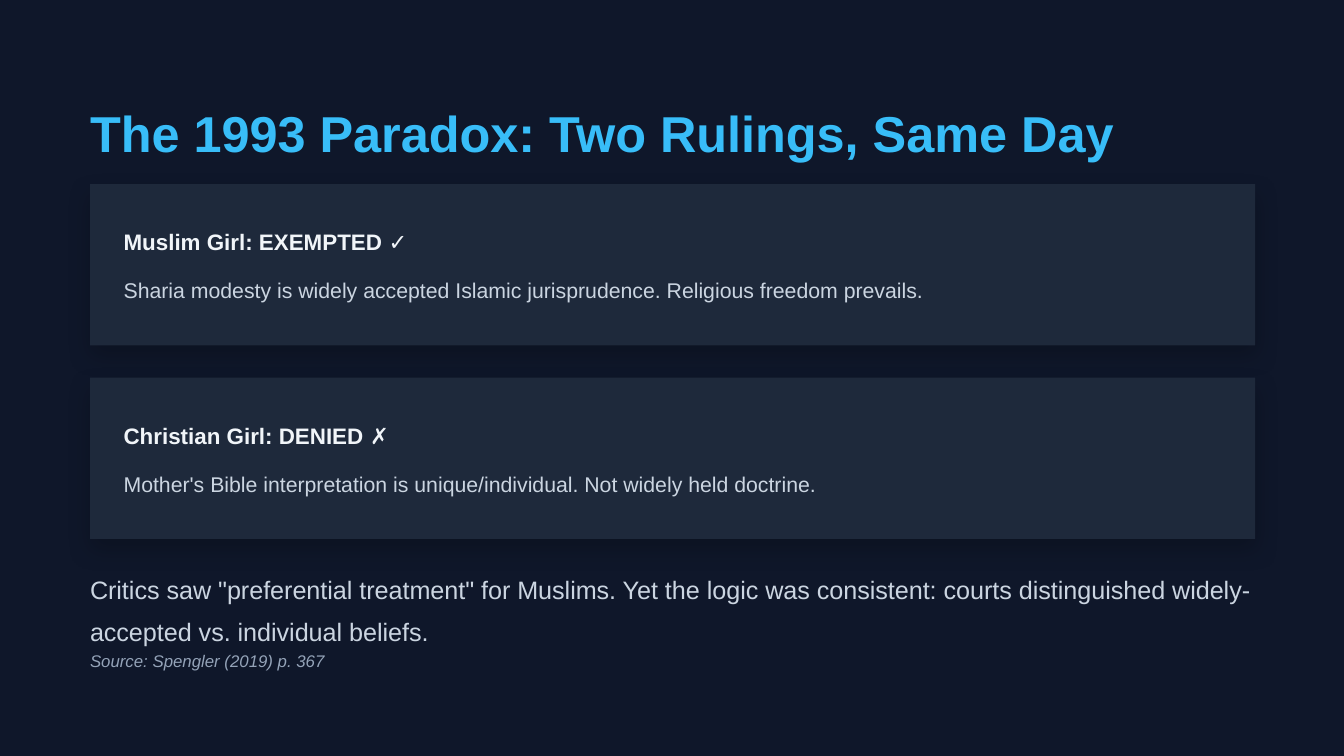
from lxml.etree import SubElement
from pptx import Presentation
from pptx.dml.color import RGBColor
from pptx.enum.shapes import MSO_SHAPE
from pptx.enum.text import MSO_ANCHOR
from pptx.oxml.ns import qn
from pptx.util import Inches, Pt

COLORS = {
    "background": "0F172A",
    "card": "1E293B",
    "title": "38BDF8",
    "heading": "F1F5F9",
    "body": "CBD5E1",
    "source": "94A3B8",
    "shadow": "000000",
}


class SlideBuilder:
    """Holds the style and the current slide."""

    font = "Arial"

    def __init__(self, slide):
        self.slide = slide

    def color(self, name):
        return RGBColor.from_string(COLORS[name])

    def background(self):
        fill = self.slide.background.fill
        fill.solid()
        fill.fore_color.rgb = self.color("background")

    def card(self, left, top, width, height):
        shape = self.slide.shapes.add_shape(
            MSO_SHAPE.RECTANGLE, Inches(left), Inches(top), Inches(width), Inches(height))
        shape.fill.solid()
        shape.fill.fore_color.rgb = self.color("card")
        shape.line.fill.background()
        self.soft_shadow(shape)

    def soft_shadow(self, shape):
        shape.shadow.inherit = False
        effects = shape._element.spPr.find(qn("a:effectLst"))
        shadow = SubElement(effects, qn("a:outerShdw"), blurRad=str(Pt(12)),
                            dist=str(Pt(6)), dir=str(90 * 60000),
                            algn="bl", rotWithShape="0")
        color = SubElement(shadow, qn("a:srgbClr"), val=COLORS["shadow"])
        SubElement(color, qn("a:alpha"), val="20000")

    def text(self, content, left, top, width, height, size, color,
             bold=False, italic=False, spacing=1.4):
        box = self.slide.shapes.add_textbox(
            Inches(left), Inches(top), Inches(width), Inches(height))
        frame = box.text_frame
        frame.word_wrap = True
        frame.vertical_anchor = MSO_ANCHOR.TOP
        frame.margin_left = frame.margin_right = 0
        frame.margin_top = frame.margin_bottom = 0
        paragraph = frame.paragraphs[0]
        paragraph.line_spacing = spacing
        run = paragraph.add_run()
        run.text = content
        run.font.name = self.font
        run.font.size = Pt(size)
        run.font.bold = bold
        run.font.italic = italic
        run.font.color.rgb = self.color(color)


def main():
    # Widescreen page, 16:9
    presentation = Presentation()
    presentation.slide_width = Inches(10)
    presentation.slide_height = Inches(10) * 9 // 16
    builder = SlideBuilder(presentation.slides.add_slide(presentation.slide_layouts[6]))
    builder.background()

    margin, card_width, card_height = 0.67, 8.67, 1.2
    first_card, card_step, padding = 1.37, 1.44, 0.25

    # Ruling cards
    rulings = [
        ("Muslim Girl: EXEMPTED ✓",
         "Sharia modesty is widely accepted Islamic jurisprudence. "
         "Religious freedom prevails."),
        ("Christian Girl: DENIED ✗",
         "Mother's Bible interpretation is unique/individual. "
         "Not widely held doctrine."),
    ]
    card_tops = [first_card + index * card_step for index in range(len(rulings))]
    for top in card_tops:
        builder.card(margin, top, card_width, card_height)

    # Title
    builder.text("The 1993 Paradox: Two Rulings, Same Day",
                 margin, 0.67, 8.84, 0.45, 27, "title", bold=True, spacing=1.2)

    # Ruling texts
    left = margin + padding
    for top, (heading, reason) in zip(card_tops, rulings):
        builder.text(heading, left, top + padding, 8.33, 0.23, 12, "heading", bold=True)
        builder.text(reason, left, top + 0.62, 8.33, 0.22, 11.4, "body")

    # Conclusion and source
    builder.text('Critics saw "preferential treatment" for Muslims. Yet the logic was '
                 "consistent: courts distinguished widely-accepted vs. individual beliefs.",
                 margin, 4.18, card_width, 0.52, 13.5, "body")
    builder.text("Source: Spengler (2019) p. 367",
                 margin, 4.78, 8.84, 0.17, 9, "source", italic=True)

    presentation.save("out.pptx")


if __name__ == "__main__":
    main()
